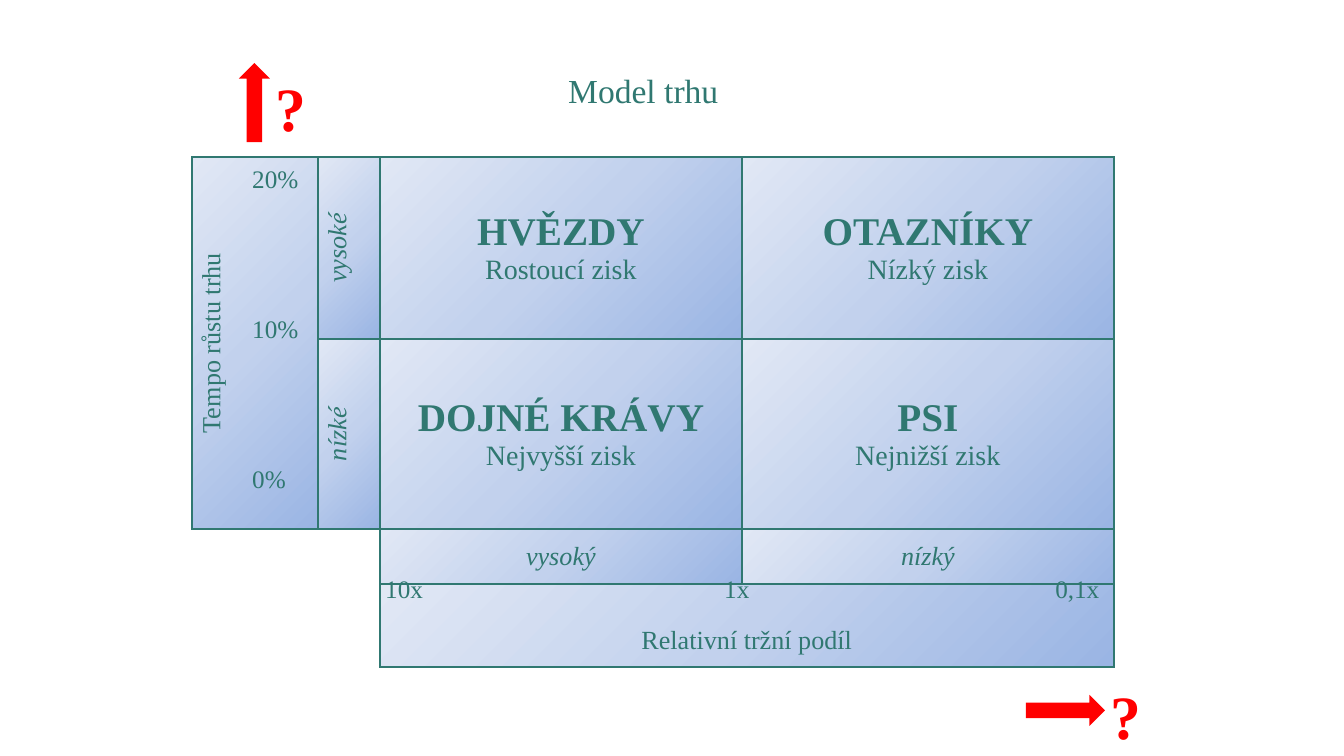
from dataclasses import dataclass

from lxml import etree
from pptx import Presentation
from pptx import util as u
from pptx.dml.color import RGBColor
from pptx.enum import shapes, text
from pptx.oxml.ns import qn

PX = 914400 / 134.4  # EMU in one px


@dataclass(frozen=True)
class Theme:
    font: str = "Times New Roman"
    ink: str = "307871"
    accent: str = "FF0000"
    gradient: tuple = ("9AB5E4", "C2D1ED", "E1E8F5")
    title: float = 18
    heading: float = 21
    detail: float = 15
    label: float = 14
    tick: float = 13.5
    mark: float = 33


T = Theme()
COLS = (126, 62, 362, 372)
ROWS = (182, 190, 55, 83)
LABEL_LINE = 30
QUADRANTS = {
    (0, 2): ("HVĚZDY", "Rostoucí zisk"),
    (0, 3): ("OTAZNÍKY", "Nízký zisk"),
    (1, 2): ("DOJNÉ KRÁVY", "Nejvyšší zisk"),
    (1, 3): ("PSI", "Nejnižší zisk"),
}
LEVELS = {(0, 1): "vysoké", (1, 1): "nízké", (2, 2): "vysoký", (2, 3): "nízký"}


def px(n):
    return u.Emu(round(n * PX))


def box(x, y, w, h):
    return px(x), px(y), px(w), px(h)


def style(p, size, color=T.ink, bold=False, italic=False):
    f = p.font
    f.name, f.size, f.bold, f.italic = T.font, u.Pt(size), bold, italic
    f.color.rgb = RGBColor.from_string(color)


def add_label(sp_tree, words, x, y, w, h, size, wrap=True, **look):
    tf = sp_tree.add_textbox(*box(x, y, w, h)).text_frame
    tf.word_wrap = wrap
    p = tf.paragraphs[0]
    p.text = words
    style(p, size, **look)


def write_cell(cell, lines, vertical=False):
    """Fill a cell with centred lines, each given as (words, size, bold, italic)."""
    tf = cell.text_frame
    for i, (words, size, bold, italic) in enumerate(lines):
        p = tf.add_paragraph() if i else tf.paragraphs[0]
        p.text = words
        p.alignment = text.PP_ALIGN.CENTER
        style(p, size, bold=bold, italic=italic)
    if vertical:
        cell._tc.get_or_add_tcPr().set("vert", "vert270")


def add_borders(cell, sides):
    tc_pr = cell._tc.get_or_add_tcPr()
    for side in "LRTB":
        ln = etree.SubElement(tc_pr, qn(f"a:ln{side}"), w=str(u.Pt(1)))
        if side in sides:
            fill = etree.SubElement(ln, qn("a:solidFill"))
            etree.SubElement(fill, qn("a:srgbClr"), val=T.ink)
        else:
            etree.SubElement(ln, qn("a:noFill"))


def add_gradient(cell):
    """Radial fill that spreads from the bottom right corner."""
    grad = etree.SubElement(cell._tc.get_or_add_tcPr(), qn("a:gradFill"), rotWithShape="1")
    stops = etree.SubElement(grad, qn("a:gsLst"))
    for i, color in enumerate(T.gradient):
        gs = etree.SubElement(stops, qn("a:gs"), pos=str(i * 50000))
        etree.SubElement(gs, qn("a:srgbClr"), val=color)
    shade = etree.SubElement(grad, qn("a:path"), path="circle")
    etree.SubElement(shade, qn("a:fillToRect"), l="100000", t="100000")
    etree.SubElement(grad, qn("a:tileRect"), r="-100000", b="-100000")


def add_matrix(sp_tree, x, y):
    table = sp_tree.add_table(len(ROWS), len(COLS), *box(x, y, sum(COLS), sum(ROWS))).table
    table.first_row = table.horz_banding = False
    for col, w in zip(table.columns, COLS):
        col.width = px(w)
    for row, h in zip(table.rows, ROWS):
        row.height = px(h)

    for r in range(len(ROWS)):
        for c in range(len(COLS)):
            cell = table.cell(r, c)
            cell.margin_left = cell.margin_right = px(9)
            cell.margin_top = cell.margin_bottom = px(5)
            cell.vertical_anchor = text.MSO_ANCHOR.MIDDLE
            if r >= 2 and c < 2:
                add_borders(cell, "TR")
                cell.fill.background()
            else:
                add_borders(cell, "LRTB")
                add_gradient(cell)

    for first, last in (((0, 0), (1, 0)), ((2, 0), (3, 1)), ((3, 2), (3, 3))):
        table.cell(*first).merge(table.cell(*last))

    for at, (heading, detail) in QUADRANTS.items():
        write_cell(table.cell(*at), [(heading, T.heading, True, False),
                                     (detail, T.detail, False, False)])
    for at, words in LEVELS.items():
        write_cell(table.cell(*at), [(words, T.label, False, True)], vertical=at[1] == 1)

    growth, share = table.cell(0, 0), table.cell(3, 2)
    growth.vertical_anchor = text.MSO_ANCHOR.TOP
    write_cell(growth, [("Tempo růstu trhu", T.label, False, False)], vertical=True)
    share.margin_top = px(5 + LABEL_LINE)
    write_cell(share, [("Relativní tržní podíl", T.label, False, False)])


def add_growth_scale(sp_tree, x, y, step):
    for i, words in enumerate(("20%", "10%", "0%")):
        add_label(sp_tree, words, x, y + i * step, 79, 44, T.tick)


def add_share_scale(sp_tree, x, y):
    for dx, words in ((0, "10x"), (339, "1x"), (670, "0,1x")):
        add_label(sp_tree, words, x + dx, y, 79, 44, T.tick)


def add_direction(sp_tree, x, y, mark_dx, rotation=0):
    """Arrow with a question mark beside it."""
    add_label(sp_tree, "?", x + mark_dx, y, 60, 89, T.mark, color=T.accent, bold=True)
    sp = sp_tree.add_shape(shapes.MSO_SHAPE.UP_ARROW, *box(x, y, 31, 79))
    sp.rotation = rotation
    sp.shadow.inherit = False
    sp.fill.solid()
    sp.fill.fore_color.rgb = RGBColor.from_string(T.accent)
    sp.line.fill.background()


def main():
    prs = Presentation()
    prs.slide_width, prs.slide_height = px(1344), px(756)
    s = prs.slides.add_slide(prs.slide_layouts[6]).shapes
    add_matrix(s, 192, 157)
    add_growth_scale(s, 239, 157, 150)
    add_share_scale(s, 372, 567)
    add_direction(s, 239, 63, mark_dx=23)
    add_direction(s, 1050, 671, mark_dx=47, rotation=90)
    add_label(s, "Model trhu", 555, 63, 194, 54, T.title, wrap=False)
    prs.save("out.pptx")


if __name__ == "__main__":
    main()
